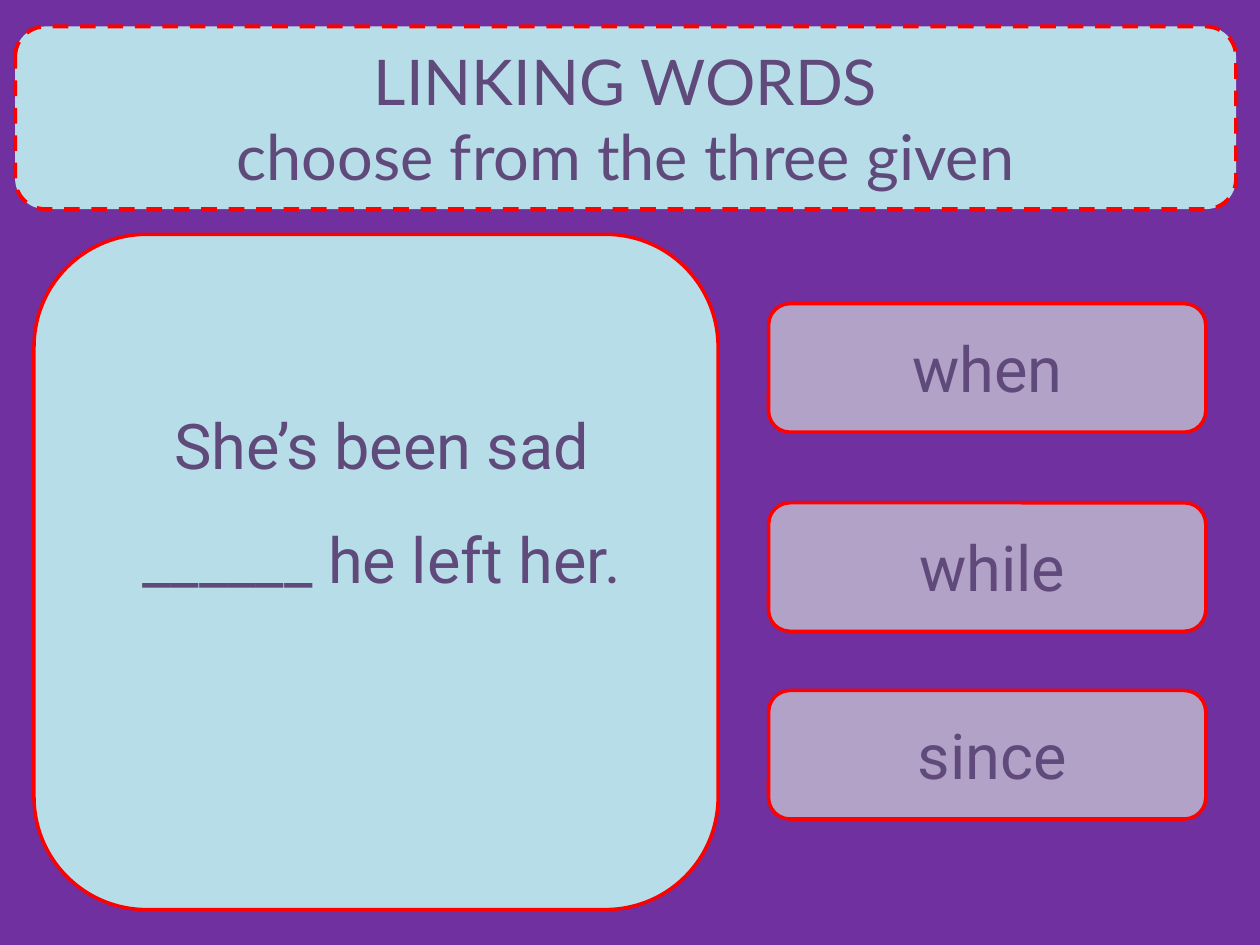
from dataclasses import dataclass

from pptx import Presentation
from pptx.dml.color import RGBColor
from pptx.enum.dml import MSO_LINE
from pptx.enum.shapes import MSO_SHAPE
from pptx.enum.text import MSO_ANCHOR, PP_ALIGN
from pptx.util import Inches, Pt

ROUNDED = MSO_SHAPE.ROUNDED_RECTANGLE
DASH = MSO_LINE.DASH
CENTER = PP_ALIGN.CENTER
MIDDLE, TOP = MSO_ANCHOR.MIDDLE, MSO_ANCHOR.TOP

# Content
TITLE = ["LINKING WORDS", "choose from the three given"]
SENTENCE = "She’s been sad ______ he left her."
# word, card top, label left, label width
OPTIONS = [
    ("when", 2.41, 6.1, 3.47),
    ("while", 3.99, 6.26, 3.23),
    ("since", 5.48, 6.18, 3.39),
]

# Layout in inches: left, top, width, height
TITLE_BOX = (0.12, 0.21, 9.69, 1.45)
SENTENCE_CARD = (0.27, 1.86, 5.43, 5.36)
SENTENCE_TEXT = (0.67, 2.88, 4.72, 2.83)
OPTION_LEFT, OPTION_W, OPTION_H = 6.1, 3.47, 1.02
LABEL_H = 0.71


@dataclass(frozen=True)
class Theme:
    background: RGBColor = RGBColor(0x70, 0x30, 0xA0)
    panel: RGBColor = RGBColor(0xB7, 0xDE, 0xE8)
    option: RGBColor = RGBColor(0xB3, 0xA2, 0xC7)
    border: RGBColor = RGBColor(0xFF, 0x00, 0x00)
    text: RGBColor = RGBColor(0x60, 0x4A, 0x7B)
    title_font: str = "Lato"
    body_font: str = "Roboto"
    size: Pt = Pt(36)
    border_width: Pt = Pt(2)
    title_border_width: Pt = Pt(2.25)


THEME = Theme()


def add_card(s, box, fill, width=THEME.border_width):
    sp = s.shapes.add_shape(ROUNDED, *map(Inches, box))
    sp.shadow.inherit = False
    sp.fill.solid()
    sp.fill.fore_color.rgb = fill
    sp.line.color.rgb = THEME.border
    sp.line.width = width
    return sp


def write(sp, lines, font, anchor=TOP, spacing=None):
    tf = sp.text_frame
    tf.word_wrap = True
    tf.vertical_anchor = anchor
    tf.text = "\n".join(lines)
    for p in tf.paragraphs:
        p.alignment = CENTER
        p.line_spacing = spacing
        p.font.name = font
        p.font.size = THEME.size
        p.font.color.rgb = THEME.text


def add_label(s, box, text, spacing=None):
    sp = s.shapes.add_textbox(*map(Inches, box))
    write(sp, [text], THEME.body_font, spacing=spacing)


def main():
    prs = Presentation()
    prs.slide_width, prs.slide_height = Inches(10), Inches(7.5)
    s = prs.slides.add_slide(prs.slide_layouts[6])
    s.background.fill.solid()
    s.background.fill.fore_color.rgb = THEME.background

    # Sentence card
    add_card(s, SENTENCE_CARD, THEME.panel)

    # Answer options, each label centred vertically on its card
    for word, top, left, width in OPTIONS:
        add_card(s, (OPTION_LEFT, top, OPTION_W, OPTION_H), THEME.option)
        label_top = top + (OPTION_H - LABEL_H) / 2
        add_label(s, (left, label_top, width, LABEL_H), word)

    # Title banner
    banner = add_card(s, TITLE_BOX, THEME.panel, THEME.title_border_width)
    banner.line.dash_style = DASH
    write(banner, TITLE, THEME.title_font, MIDDLE)

    # Sentence with the gap to fill
    add_label(s, SENTENCE_TEXT, SENTENCE, spacing=1.5)

    prs.save("out.pptx")


if __name__ == "__main__":
    main()
